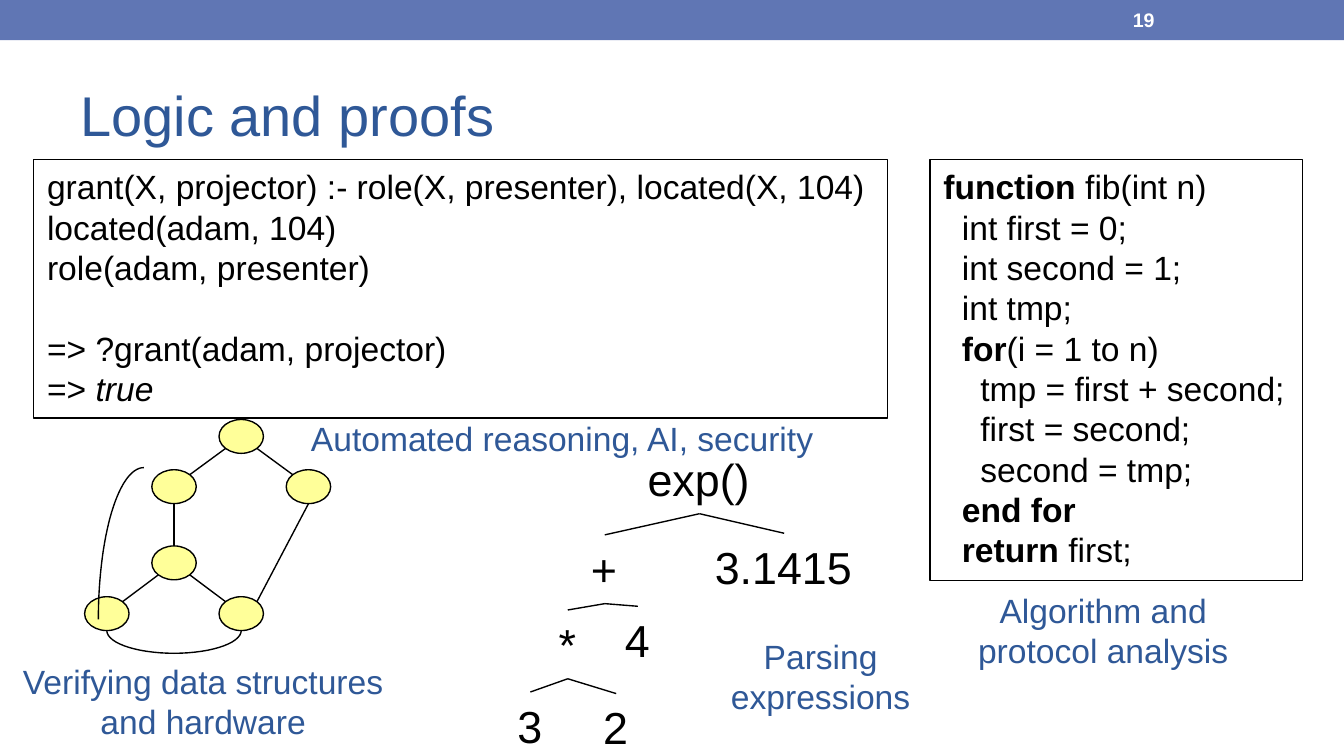
from math import cos, radians, sin

from lxml.etree import SubElement
from pptx import Presentation
from pptx.dml.color import RGBColor
from pptx.enum.shapes import MSO_CONNECTOR, MSO_SHAPE
from pptx.enum.text import MSO_ANCHOR, PP_ALIGN
from pptx.oxml.ns import qn
from pptx.util import Cm, Pt

BLACK = RGBColor(0, 0, 0)
WHITE = RGBColor(255, 255, 255)
BLUE = RGBColor(0x2F, 0x58, 0x97)
BAND = RGBColor(0x60, 0x76, 0xB4)
YELLOW = RGBColor(0xFF, 0xFF, 0x99)
FONT = "Arial"
STEP = 0.35  # indent of one code level

RULES = [
    "grant(X, projector) :- role(X, presenter), located(X, 104)",
    "located(adam, 104)",
    "role(adam, presenter)",
    "=> ?grant(adam, projector)",
    "=> ",
]

# level, keyword, rest of the line
CODE = [
    (0, "function", " fib(int n)"),
    (1, "", "int first = 0;"),
    (1, "", "int second = 1;"),
    (1, "", "int tmp;"),
    (1, "for", "(i = 1 to n)"),
    (2, "", "tmp = first + second;"),
    (2, "", "first = second;"),
    (2, "", "second = tmp;"),
    (1, "end for", ""),
    (1, "return", " first;"),
]

LABELS = [
    ("Algorithm and\nprotocol analysis", 18.21, 11.02, 5.28, 1.8),
    ("Automated reasoning, AI, security", 5.56, 7.77, 10.13, 1.02),
    ("Verifying data structures\nand hardware", 0.13, 12.37, 7.42, 1.8),
    ("Parsing\nexpressions", 13.54, 11.89, 3.94, 1.8),
]

# centre of each graph node
COLS = [2.02 + 1.27 * i for i in range(4)]
ROWS = [8.25, 9.2, 10.64, 11.6]
NODES = [(COLS[c], ROWS[r])
         for c, r in [(2, 0), (1, 1), (3, 1), (1, 2), (0, 3), (2, 3)]]
NODE_W, NODE_H = 0.84, 0.64

# node and angle on its rim, at each end
LINKS = [
    (0, 135, 1, 315), (0, 45, 2, 225), (1, 90, 3, 270),
    (3, 45, 5, 225), (3, 135, 4, 315), (2, 90, 5, 315),
]

# left, top and width of each term
TERMS = {
    "exp()": (11.99, 8.41, 2.46),
    "+": (10.92, 10.11, 1.02),
    "3.1415": (13.26, 10.08, 3.12),
    "*": (10.31, 11.53, 0.84),
    "4": (11.56, 11.46, 0.99),
    "3": (9.53, 13.08, 0.99),
    "2": (11.15, 13.11, 0.99),
}
TERM_H = 1.3
PARTS = {"exp()": ("+", "3.1415"), "+": ("*", "4"), "*": ("3", "2")}


def style(frame, size, color, align=PP_ALIGN.LEFT):
    for para in frame.paragraphs:
        para.alignment = align
        para.line_spacing = Pt(size * 1.2)
        for run in para.runs:
            run.font.name = FONT
            run.font.size = Pt(size)
            run.font.color.rgb = color


def add_text(slide, text, x, y, w, h, size, color,
             align=PP_ALIGN.LEFT, anchor=MSO_ANCHOR.TOP):
    box = slide.shapes.add_textbox(Cm(x), Cm(y), Cm(w), Cm(h))
    frame = box.text_frame
    frame.word_wrap = True
    frame.vertical_anchor = anchor
    frame.text = text
    style(frame, size, color, align)
    return box


def outline(shape):
    shape.line.color.rgb = BLACK
    shape.line.width = Pt(0.75)


def add_shape(slide, kind, x, y, w, h, fill):
    shape = slide.shapes.add_shape(kind, Cm(x), Cm(y), Cm(w), Cm(h))
    shape.shadow.inherit = False
    shape.fill.solid()
    shape.fill.fore_color.rgb = fill
    return shape


def add_line(slide, start, end):
    line = slide.shapes.add_connector(
        MSO_CONNECTOR.STRAIGHT, *map(Cm, start + end))
    outline(line)
    SubElement(line._element.spPr, qn("a:effectLst"))


def rim(x, y, rx, ry, angle):
    """Point on an ellipse; angles run clockwise from the right."""
    turn = radians(angle)
    return x + rx * cos(turn), y + ry * sin(turn)


def add_arc(slide, x, y, rx, ry, first, last):
    count = 30
    points = [tuple(map(Cm, rim(x, y, rx, ry,
                                first + (last - first) * i / count)))
              for i in range(count + 1)]
    path = slide.shapes.build_freeform(*points[0])
    path.add_line_segments(points[1:], close=False)
    arc = path.convert_to_shape()
    arc.shadow.inherit = False
    arc.fill.background()
    outline(arc)


def add_code(slide):
    box = add_text(slide, "\n".join(key for _, key, _ in CODE),
                   17.58, 3.02, 7.04, 7.95, 18, BLACK)
    box.fill.solid()
    box.fill.fore_color.rgb = WHITE
    outline(box)
    for para, (level, _, rest) in zip(box.text_frame.paragraphs, CODE):
        for run in para.runs:
            run.font.bold = True
        if rest:
            para.add_run().text = rest
        para._p.get_or_add_pPr().set("marL", str(Cm(STEP * level)))
    style(box.text_frame, 18, BLACK)


def add_rules(slide):
    box = add_text(slide, "\n".join(RULES), 0.64, 3.02, 16.13, 4.88,
                   18, BLACK)
    outline(box)
    paras = box.text_frame.paragraphs
    paras[3].space_before = Pt(21.6)
    run = paras[4].add_run()
    run.text = "true"
    run.font.italic = True
    style(box.text_frame, 18, BLACK)


def add_graph(slide):
    for x, y in NODES:
        outline(add_shape(slide, MSO_SHAPE.OVAL, x - NODE_W / 2,
                          y - NODE_H / 2, NODE_W, NODE_H, YELLOW))
    for a, leave, b, reach in LINKS:
        add_line(slide, rim(*NODES[a], NODE_W / 2, NODE_H / 2, leave),
                 rim(*NODES[b], NODE_W / 2, NODE_H / 2, reach))
    add_arc(slide, 2.72, 11.71, 0.86, 2.87, 180, 270)
    add_arc(slide, COLS[1], 11.92, 1.27, 0.43, 0, 180)


def add_tree(slide):
    for term, (x, y, w) in TERMS.items():
        add_text(slide, term, x, y, w, TERM_H, 24, BLACK)
    for term, parts in PARTS.items():
        x, y, w = TERMS[term]
        for part in parts:
            left, top, width = TERMS[part]
            add_line(slide, (x + w / 2, y + TERM_H), (left + width / 2, top))


def main():
    deck = Presentation()
    deck.slide_width, deck.slide_height = Cm(25.4), Cm(14.29)
    slide = deck.slides.add_slide(deck.slide_layouts[6])
    band = add_shape(slide, MSO_SHAPE.RECTANGLE, 0, 0, 25.4, 0.76, BAND)
    band.line.fill.background()
    add_text(slide, "Logic and proofs", 1.27, 1.12, 22.86, 2.06, 30, BLUE,
             anchor=MSO_ANCHOR.MIDDLE)
    add_code(slide)
    add_rules(slide)
    add_graph(slide)
    add_tree(slide)
    for text, *place in LABELS:
        add_text(slide, text, *place, 18, BLUE, PP_ALIGN.CENTER)
    page = add_text(slide, "19", 21.16, 0.03, 2.97, 0.69, 10.5, WHITE,
                    anchor=MSO_ANCHOR.MIDDLE)
    page.text_frame.paragraphs[0].runs[0].font.bold = True
    deck.save("out.pptx")


if __name__ == "__main__":
    main()
